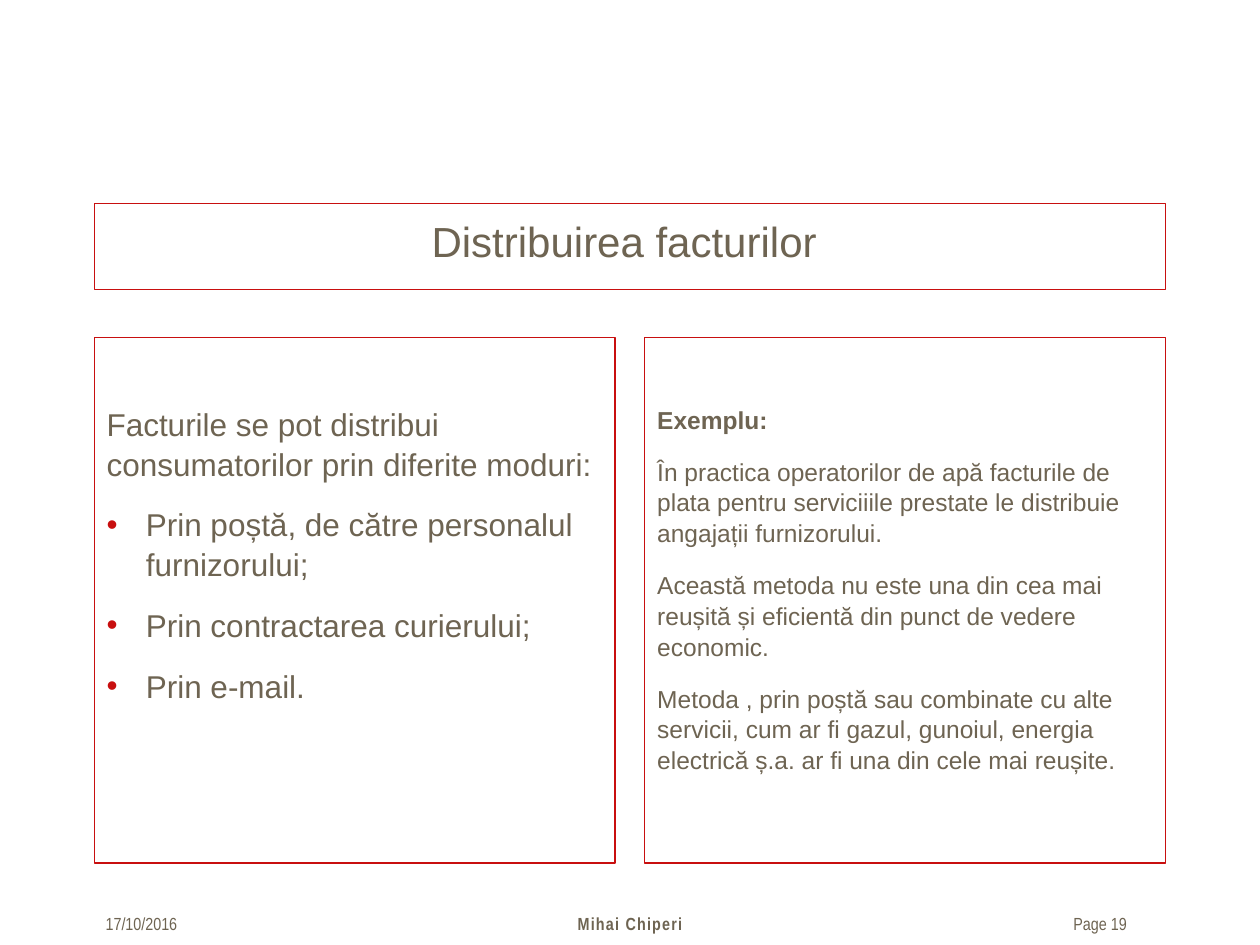
from lxml import etree
from pptx import Presentation
from pptx.dml.color import RGBColor
from pptx.enum.shapes import MSO_SHAPE
from pptx.enum.text import MSO_ANCHOR, PP_ALIGN
from pptx.oxml.ns import qn
from pptx.util import Cm, Pt

RECT = MSO_SHAPE.RECTANGLE
TOP = MSO_ANCHOR.TOP
LEFT, CENTER = PP_ALIGN.LEFT, PP_ALIGN.CENTER
COLORS = {"text": "6E6452", "red": "C80F0F"}

MARGIN, WIDTH, GAP = 1.9, 21.6, 0.6
PANEL = (WIDTH - GAP) / 2

MODES = [
    "Prin poștă, de către personalul furnizorului;",
    "Prin contractarea curierului;",
    "Prin e-mail.",
]
EXAMPLE = [
    "În practica operatorilor de apă facturile de plata pentru serviciiile "
    "prestate le distribuie angajații furnizorului.",
    "Această metoda nu este una din cea mai reușită și eficientă din punct "
    "de vedere economic.",
    "Metoda , prin poștă sau combinate cu alte servicii, cum ar fi gazul, "
    "gunoiul, energia electrică ș.a. ar fi una din cele mai reușite.",
]


def rgb(name):
    return RGBColor.from_string(COLORS[name])


def style(para, size, face="Arial", bold=False, align=LEFT):
    para.alignment = align
    for run in para.runs:
        font = run.font
        font.name, font.size, font.bold = face, Pt(size), bold
        font.color.rgb = rgb("text")


def add_bullet(para):
    props = para._p.get_or_add_pPr()
    props.set("marL", str(Cm(0.79)))
    props.set("indent", str(Cm(-0.79)))
    color = etree.SubElement(props, qn("a:buClr"))
    etree.SubElement(color, qn("a:srgbClr"), val=COLORS["red"])
    etree.SubElement(props, qn("a:buFont"), typeface="Arial")
    etree.SubElement(props, qn("a:buChar"), char="•")


def add_frame(slide, x, y, w, h):
    """Add a red outlined box and return its text frame."""
    box = slide.shapes.add_shape(RECT, Cm(x), Cm(y), Cm(w), Cm(h))
    box.shadow.inherit = False
    box.fill.background()
    box.line.color.rgb = rgb("red")
    box.line.width = Pt(0.75)
    frame = box.text_frame
    frame.word_wrap = True
    frame.vertical_anchor = TOP
    return frame


def add_title(slide, text):
    frame = add_frame(slide, MARGIN, 4.11, WIDTH, 1.73)
    frame.text = text
    para = frame.paragraphs[0]
    para.line_spacing = 1.1
    style(para, 24, align=CENTER)


def add_panel(slide, col, head, lines, size, bold=False, bullets=False):
    x = MARGIN + col * (PANEL + GAP)
    frame = add_frame(slide, x, 6.81, PANEL, 10.59)
    frame.margin_top = Cm(1.32)
    frame.text = "\n".join([head, *lines])
    for i, para in enumerate(frame.paragraphs):
        para.line_spacing = 1.05
        para.space_before = Pt(4 if i else 0)
        para.space_after = Pt(8)
        if bullets and i:
            add_bullet(para)
        style(para, size, bold=bold and i == 0)


def add_footer(slide, text, x, w, align=LEFT, bold=False, track=0):
    """Add a footer text; track is letter spacing in points."""
    box = slide.shapes.add_textbox(Cm(x), Cm(18.29), Cm(w), Cm(0.69))
    frame = box.text_frame
    frame.word_wrap = True
    frame.text = text
    para = frame.paragraphs[0]
    style(para, 10, "Arial Narrow", bold, align)
    if track:
        para.runs[0].font._element.set("spc", str(round(track * 100)))


def main():
    deck = Presentation()
    deck.slide_width, deck.slide_height = Cm(25.4), Cm(19.05)
    slide = deck.slides.add_slide(deck.slide_layouts[6])
    add_footer(slide, "Page 19", 21.39, 2.57)
    add_footer(slide, "Mihai Chiperi", 7.95, 9.5, CENTER, True, 0.7)
    add_footer(slide, "17/10/2016", 1.88, 3.61)
    add_panel(slide, 0,
              "Facturile se pot distribui consumatorilor prin diferite moduri:",
              MODES, 18, bullets=True)
    add_panel(slide, 1, "Exemplu:", EXAMPLE, 14, bold=True)
    add_title(slide, "Distribuirea facturilor ")
    deck.save("out.pptx")


if __name__ == "__main__":
    main()
